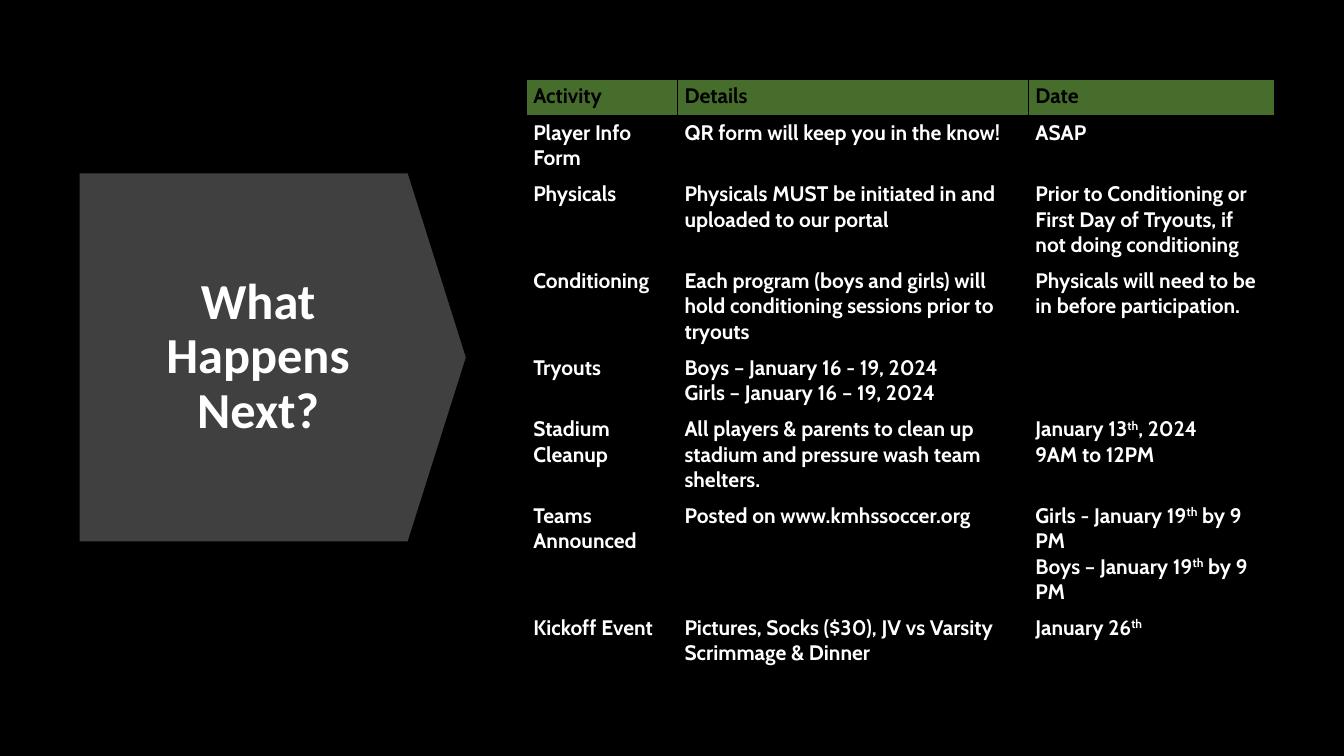
from pptx import Presentation
from pptx import util as u
from pptx.dml import color
from pptx.enum import shapes, text
from pptx.oxml import ns
from lxml import etree

BLACK, WHITE, GRAY, GREEN = "000000", "FFFFFF", "404040", "476D2D"
COLUMN_WIDTHS = [1.5, 3.48, 2.44]
ROW_HEIGHTS = [0.36, 0.61, 0.86, 0.86, 0.61, 0.86, 1.11, 0.61]
SCHEDULE = [
    ["Activity", "Details", "Date"],
    ["Player Info Form", "QR form will keep you in the know!", "ASAP"],
    ["Physicals", "Physicals MUST be initiated in and uploaded to our portal",
     "Prior to Conditioning or First Day of Tryouts, if not doing conditioning"],
    ["Conditioning",
     "Each program (boys and girls) will hold conditioning sessions prior to tryouts",
     "Physicals will need to be in before participation."],
    ["Tryouts", "Boys – January 16 - 19, 2024\nGirls – January 16 – 19, 2024", None],
    ["Stadium Cleanup",
     "All players & parents to clean up stadium and pressure wash team shelters.",
     "January 13^th^, 2024\n9AM to 12PM"],
    ["Teams Announced", "Posted on www.kmhssoccer.org",
     "Girls - January 19^th^ by 9 PM\nBoys – January 19^th^ by 9 PM"],
    ["Kickoff Event", "Pictures, Socks ($30), JV vs Varsity Scrimmage & Dinner",
     "January 26^th"],
]


def paint(target, hex_color):
    target.solid()
    target.fore_color.rgb = color.RGBColor.from_string(hex_color)


def add_run(paragraph, words, font_name, size, hex_color, raised=False):
    run = paragraph.add_run()
    run.text = words
    run.font.name = font_name
    run.font.size = u.Pt(size)
    run.font.bold = True
    paint(run.font.fill, hex_color)
    if raised:
        run.font._element.set("baseline", "30000")


def add_title_arrow(slide, left, top, width, height):
    arrow = slide.shapes.add_shape(
        shapes.MSO_SHAPE.DOWN_ARROW,
        u.Inches(left + (width - height) / 2), u.Inches(top + (height - width) / 2),
        u.Inches(height), u.Inches(width))
    arrow.rotation = 270
    arrow.adjustments[0] = 1
    arrow.adjustments[1] = 0.158
    arrow.shadow.inherit = False
    paint(arrow.fill, GRAY)
    arrow.line.fill.background()

    title = slide.shapes.add_textbox(
        u.Inches(left + 0.33), u.Inches(top + 0.43),
        u.Inches(width - 0.95), u.Inches(height - 0.86))
    frame = title.text_frame
    frame.word_wrap = True
    frame.vertical_anchor = text.MSO_ANCHOR.MIDDLE
    frame.margin_left = frame.margin_right = frame.margin_top = frame.margin_bottom = 0
    paragraph = frame.paragraphs[0]
    paragraph.alignment = text.PP_ALIGN.CENTER
    paragraph.line_spacing = 0.9
    add_run(paragraph, "What Happens Next?", "Calibri", 36, WHITE)


def add_borders(cell, hex_color):
    properties = cell._tc.get_or_add_tcPr()
    for side in ("a:lnL", "a:lnR", "a:lnT", "a:lnB"):
        line = etree.SubElement(properties, ns.qn(side), w=str(u.Pt(1)))
        fill = etree.SubElement(line, ns.qn("a:solidFill"))
        etree.SubElement(fill, ns.qn("a:srgbClr"), val=hex_color)


def fill_cell(cell, content, is_header):
    cell.margin_left = cell.margin_right = u.Inches(0.07)
    cell.margin_top = cell.margin_bottom = u.Inches(0.04)
    add_borders(cell, BLACK)
    if is_header:
        paint(cell.fill, GREEN)
    else:
        cell.fill.background()
    if content is None:
        return
    frame = cell.text_frame
    for number, words in enumerate(content.split("\n")):
        paragraph = frame.add_paragraph() if number else frame.paragraphs[0]
        for part, piece in enumerate(words.split("^")):
            add_run(paragraph, piece, "Cabin", 15,
                    BLACK if is_header else WHITE, raised=part % 2 == 1)


def add_schedule(slide, left, top):
    frame = slide.shapes.add_table(
        len(ROW_HEIGHTS), len(COLUMN_WIDTHS), u.Inches(left), u.Inches(top),
        u.Inches(sum(COLUMN_WIDTHS)), u.Inches(sum(ROW_HEIGHTS)))
    table = frame.table
    table.first_row = table.horz_banding = False
    for column, width in zip(table.columns, COLUMN_WIDTHS):
        column.width = u.Inches(width)
    for row, height in zip(table.rows, ROW_HEIGHTS):
        row.height = u.Inches(height)
    for row, contents in enumerate(SCHEDULE):
        for column, content in enumerate(contents):
            fill_cell(table.cell(row, column), content, row == 0)
            if content is None:
                table.cell(row, column - 1).merge(table.cell(row, column))


def main():
    presentation = Presentation()
    presentation.slide_width = u.Inches(13.33)
    presentation.slide_height = u.Inches(7.5)
    slide = presentation.slides.add_slide(presentation.slide_layouts[6])
    paint(slide.background.fill, BLACK)
    add_title_arrow(slide, 0.79, 1.72, 3.83, 3.65)
    add_schedule(slide, 5.22, 0.79)
    presentation.save("out.pptx")


if __name__ == "__main__":
    main()
